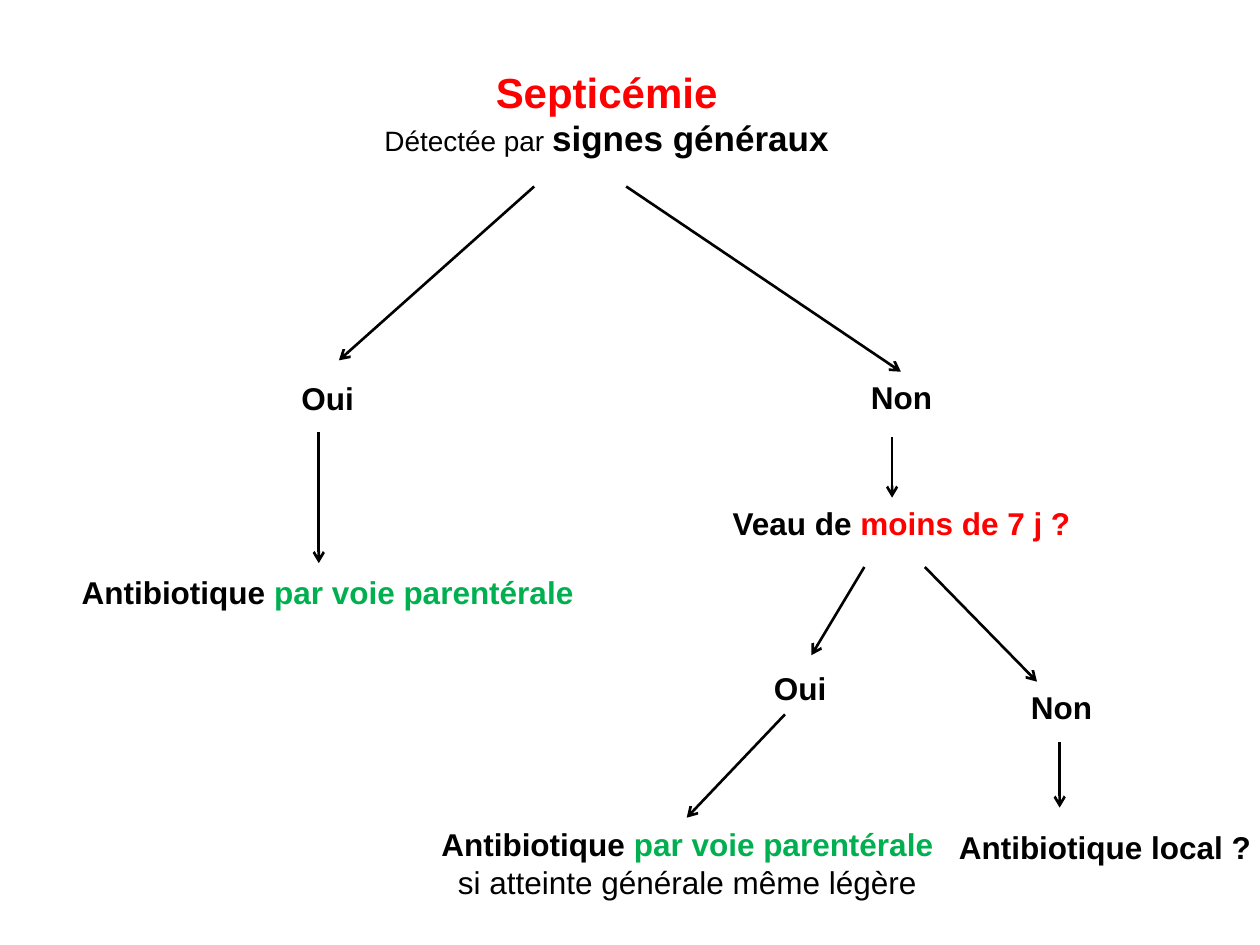
"""Build the decision tree for antibiotic treatment of calves."""
from lxml import etree
from pptx import Presentation
from pptx.dml.color import RGBColor
from pptx.enum import shapes, text
from pptx.oxml import ns
from pptx.util import Inches, Pt

COLOURS = {"ink": "000000", "alert": "FF0000", "treatment": "00B050"}


def add_label(left, top, width, height, lines, wrap=False):
    label = slide.shapes.add_textbox(*map(Inches, (left, top, width, height)))
    frame = label.text_frame
    frame.word_wrap = wrap
    frame.vertical_anchor = text.MSO_ANCHOR.MIDDLE
    for number, line in enumerate(lines):
        paragraph = frame.add_paragraph() if number else frame.paragraphs[0]
        paragraph.alignment = text.PP_ALIGN.CENTER
        for words, size, colour, bold in line:
            run = paragraph.add_run()
            run.text = words
            run.font.name = "Arial"
            run.font.size = Pt(size)
            run.font.bold = bold
            run.font.color.rgb = RGBColor.from_string(COLOURS[colour])


def add_arrow(*ends):
    arrow = slide.shapes.add_connector(
        shapes.MSO_CONNECTOR.STRAIGHT, *map(Inches, ends))
    arrow.line.width = Pt(1.5)
    arrow.line.color.rgb = RGBColor.from_string(COLOURS["ink"])
    etree.SubElement(arrow.line._get_or_add_ln(), ns.qn("a:tailEnd"), type="arrow")
    etree.SubElement(arrow._element.spPr, ns.qn("a:effectLst"))


deck = Presentation()
deck.slide_width, deck.slide_height = Inches(10), Inches(7.5)
slide = deck.slides.add_slide(deck.slide_layouts[6])

add_label(1.28, 0.26, 7.07, 1.27, [
    [("Septicémie", 24, "alert", True)],
    [("Détectée par ", 16, "ink", False), ("signes généraux", 20, "ink", True)],
], wrap=True)

answers = [
    ("Oui", 2.29, 2.96, 0.62),
    ("Non", 6.81, 2.95, 0.69),
    ("Oui", 6.04, 5.26, 0.62),
    ("Non", 8.08, 5.41, 0.69),
]
for answer, left, top, width in answers:
    add_label(left, top, width, 0.4, [[(answer, 18, "ink", True)]])

add_label(5.7, 3.95, 2.91, 0.4, [
    [("Veau de ", 18, "ink", True), ("moins de 7 j ?", 18, "alert", True)]])

parenteral = [("Antibiotique ", 18, "ink", True),
              ("par voie parentérale", 18, "treatment", True)]
condition = [("si atteinte générale même légère", 18, "ink", False)]
add_label(0.53, 4.5, 4.14, 0.4, [parenteral])
add_label(3.39, 6.49, 4.13, 0.71, [parenteral, condition])
add_label(7.44, 6.52, 2.66, 0.4,
          [[("Antibiotique local ?", 18, "ink", True)]], wrap=True)

branches = [
    (4.24, 1.48, 2.69, 2.86),
    (4.97, 1.48, 7.15, 2.95),
    (2.53, 3.43, 2.53, 4.47),
    (7.08, 3.47, 7.08, 3.95),
    (6.86, 4.5, 6.44, 5.2),
    (7.34, 4.5, 8.23, 5.41),
    (6.23, 5.67, 5.45, 6.49),
    (8.41, 5.89, 8.41, 6.41),
]
for branch in branches:
    add_arrow(*branch)

deck.save("out.pptx")
